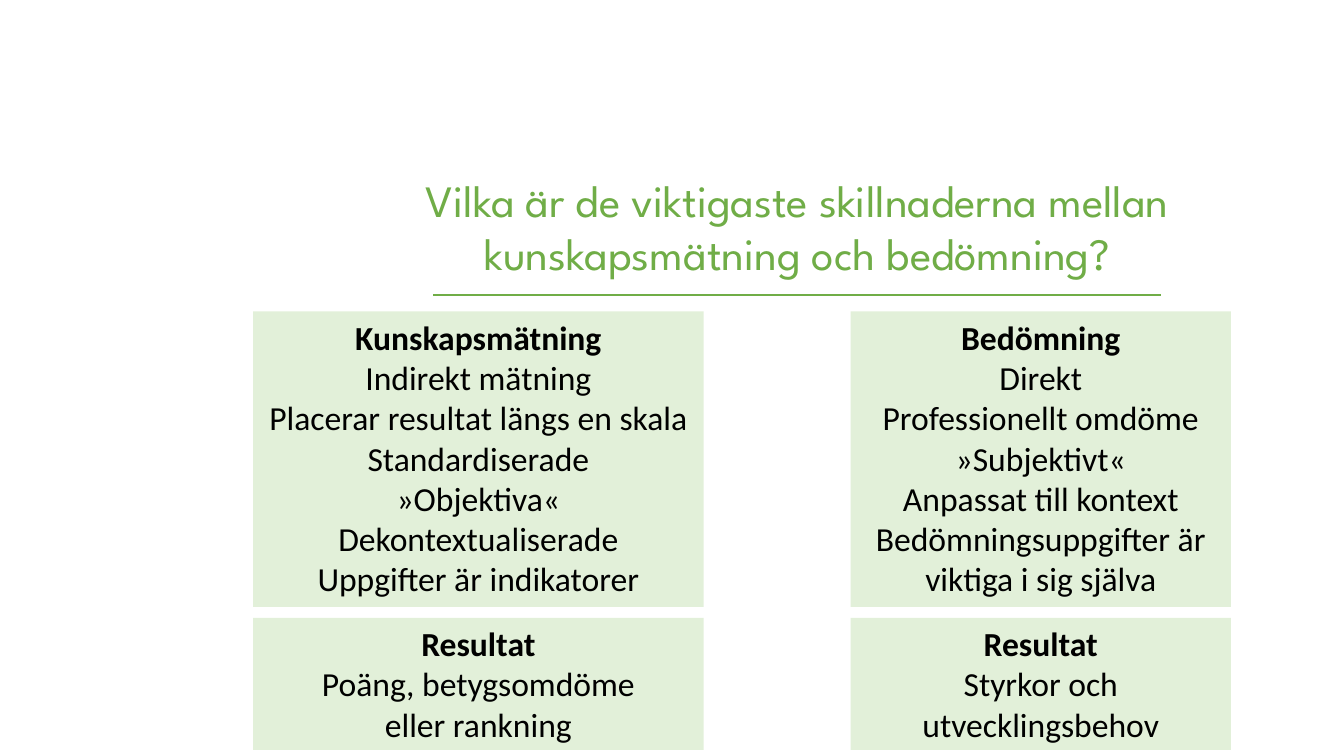
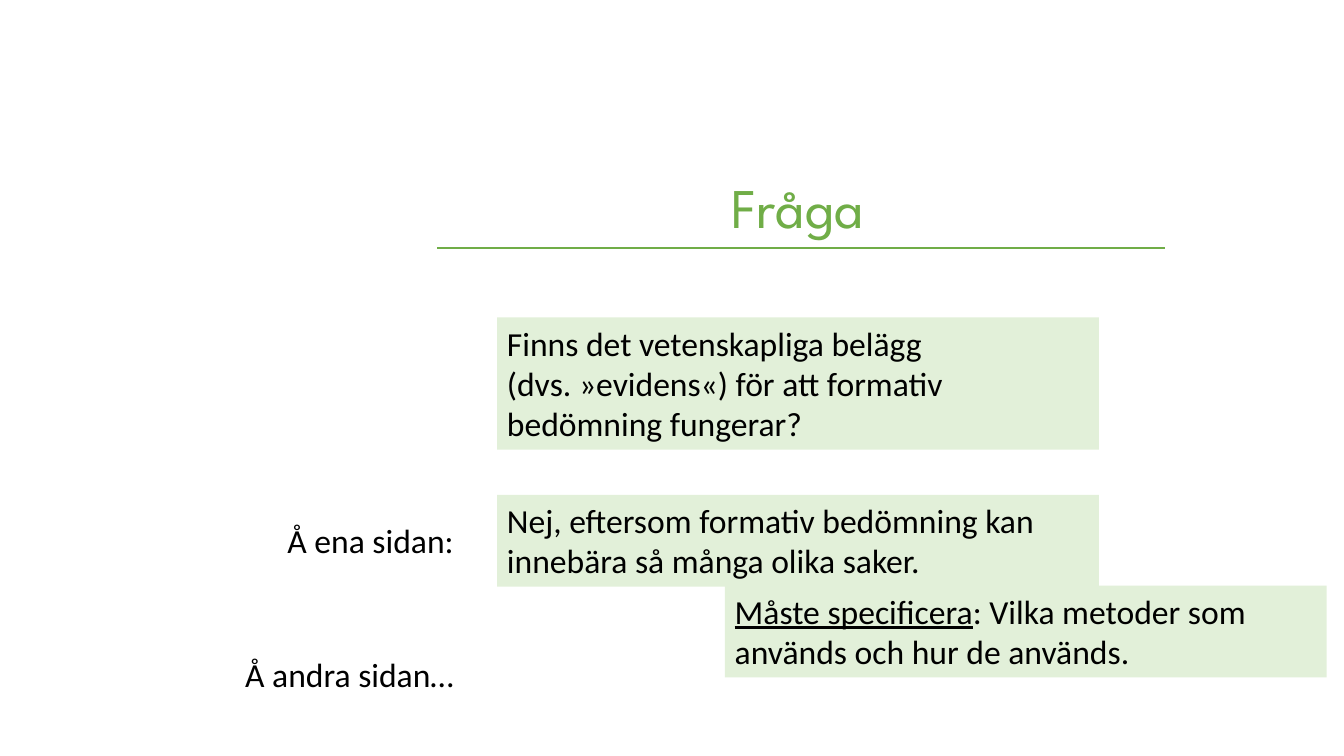
"""Build two slides on knowledge measurement, assessment and evidence."""
from dataclasses import dataclass
from itertools import product
from typing import Optional

from lxml import etree
from pptx import Presentation
from pptx import util as u
from pptx.dml.color import RGBColor
from pptx.enum import shapes, text
from pptx.oxml.ns import qn

ALIGN = text.PP_ALIGN


@dataclass(frozen=True)
class Theme:
    accent: RGBColor = RGBColor(0x70, 0xAD, 0x47)
    panel: RGBColor = RGBColor(0xE2, 0xF0, 0xD9)
    ink: RGBColor = RGBColor(0, 0, 0)
    title_font: str = "League Spartan"
    body_font: str = "Calibri"
    title_size: int = 40
    long_title_size: int = 32
    body_size: int = 24
    rule_width: float = 1.5


@dataclass(frozen=True)
class Area:
    """A rectangle in percent of the slide's width and height."""
    left: float
    top: float
    width: float
    height: float


@dataclass(frozen=True)
class Run:
    words: str
    bold: bool = False
    underline: bool = False


@dataclass(frozen=True)
class Box:
    area: Area
    paragraphs: list[list[Run]]
    align: ALIGN = ALIGN.LEFT
    fill: Optional[RGBColor] = None


@dataclass(frozen=True)
class Heading:
    words: str
    size: int
    height: float
    rule_left: float
    rule_top: float


THEME = Theme()
WIDTH, HEIGHT = u.Inches(13.333), u.Inches(7.5)
TITLE_LEFT, TITLE_TOP, TITLE_WIDTH = 24.08, 22.13, 70.58
RULE_LENGTH = 54.1
COLUMNS = [(18.83, 33.53), (63.3, 28.28)]
ROWS = [(41.2, 39.07), (81.73, 17.47)]
COMPARISON = [
    [
        ["Kunskapsmätning", "Indirekt mätning", "Placerar resultat längs en skala",
         "Standardiserade", "»Objektiva«", "Dekontextualiserade",
         "Uppgifter är indikatorer"],
        ["Bedömning", "Direkt", "Professionellt omdöme", "»Subjektivt«",
         "Anpassat till kontext", "Bedömningsuppgifter är viktiga i sig själva"],
    ],
    [
        ["Resultat", "Poäng, betygsomdöme\neller rankning"],
        ["Resultat", "Styrkor och utvecklingsbehov"],
    ],
]
ANSWER_LEFT, ANSWER_WIDTH, ANSWER_HEIGHT = 36.98, 44.78, 12.13
STATEMENTS = [
    (Area(ANSWER_LEFT, 42, ANSWER_WIDTH, 17.47),
     [Run("Finns det vetenskapliga belägg\n(dvs. »evidens«) för att formativ bedömning fungerar?")]),
    (Area(ANSWER_LEFT, 65.47, ANSWER_WIDTH, ANSWER_HEIGHT),
     [Run("Nej, eftersom formativ bedömning kan innebära så många olika saker.")]),
    (Area(53.93, 77.47, ANSWER_WIDTH, ANSWER_HEIGHT),
     [Run("Måste specificera", underline=True),
      Run(": Vilka metoder som används och hur de används.")]),
]
LABELS = [("Å ena sidan:", 68.13), ("Å andra sidan…", 85.87)]


def across(share: float) -> u.Emu:
    """Turn a percentage of the slide's width into a length."""
    return u.Emu(round(WIDTH * share / 100))


def down(share: float) -> u.Emu:
    """Turn a percentage of the slide's height into a length."""
    return u.Emu(round(HEIGHT * share / 100))


def add_words(paragraph, run: Run, *, font: str, size: int, color: RGBColor) -> None:
    """Add formatted text, with a line break at each newline."""
    for index, line in enumerate(run.words.split("\n")):
        if index:
            paragraph.add_line_break()
        piece = paragraph.add_run()
        piece.text = line
        piece.font.name = font
        piece.font.size = u.Pt(size)
        piece.font.color.rgb = color
        piece.font.bold = run.bold
        piece.font.underline = run.underline


def add_box(slide, box: Box, *, font: str = THEME.body_font,
            size: int = THEME.body_size, color: RGBColor = THEME.ink) -> None:
    """Draw a text box, or a filled rectangle when the box has a fill."""
    area = box.area
    frame = across(area.left), down(area.top), across(area.width), down(area.height)
    if box.fill is None:
        shape = slide.shapes.add_textbox(*frame)
    else:
        shape = slide.shapes.add_shape(shapes.MSO_SHAPE.RECTANGLE, *frame)
        shape.shadow.inherit = False
        shape.fill.solid()
        shape.fill.fore_color.rgb = box.fill
        shape.line.fill.background()
    text_frame = shape.text_frame
    text_frame.word_wrap = True
    text_frame.auto_size = text.MSO_AUTO_SIZE.SHAPE_TO_FIT_TEXT
    text_frame.vertical_anchor = text.MSO_ANCHOR.TOP
    for index, runs in enumerate(box.paragraphs):
        paragraph = text_frame.add_paragraph() if index else text_frame.paragraphs[0]
        paragraph.alignment = box.align
        for run in runs:
            add_words(paragraph, run, font=font, size=size, color=color)


def add_slide(presentation, heading: Heading):
    """Add a blank slide with a centred title and the rule below it."""
    slide = presentation.slides.add_slide(presentation.slide_layouts[6])
    area = Area(TITLE_LEFT, TITLE_TOP, TITLE_WIDTH, heading.height)
    add_box(slide, Box(area, [[Run(heading.words)]], ALIGN.CENTER),
            font=THEME.title_font, size=heading.size, color=THEME.accent)
    rule = slide.shapes.add_connector(
        shapes.MSO_CONNECTOR.STRAIGHT, across(heading.rule_left), down(heading.rule_top),
        across(heading.rule_left + RULE_LENGTH), down(heading.rule_top))
    rule.line.color.rgb = THEME.accent
    rule.line.width = u.Pt(THEME.rule_width)
    etree.SubElement(rule.element.spPr, qn("a:effectLst"))
    return slide


def build_comparison(presentation) -> None:
    """Compare measurement and assessment in a grid of panels."""
    slide = add_slide(presentation, Heading(
        "Vilka är de viktigaste skillnaderna mellan kunskapsmätning och bedömning?",
        THEME.long_title_size, 15.6, 32.25, 39.07))
    for (row, (top, height)), (column, (left, width)) in product(
            enumerate(ROWS), enumerate(COLUMNS)):
        paragraphs = [[Run(line, bold=index == 0)]
                      for index, line in enumerate(COMPARISON[row][column])]
        add_box(slide, Box(Area(left, top, width, height), paragraphs,
                           ALIGN.CENTER, THEME.panel))


def build_question(presentation) -> None:
    """Pose the question about evidence and answer from two sides."""
    slide = add_slide(presentation, Heading("Fråga", THEME.title_size, 10, 32.55, 32.8))
    for area, runs in STATEMENTS:
        add_box(slide, Box(area, [runs], fill=THEME.panel))
    for words, top in LABELS:
        add_box(slide, Box(Area(15.6, top, 18.9, 6.67), [[Run(words)]], ALIGN.RIGHT))


def main() -> None:
    """Build and save the presentation."""
    presentation = Presentation()
    presentation.slide_width, presentation.slide_height = WIDTH, HEIGHT
    build_comparison(presentation)
    build_question(presentation)
    presentation.save("out.pptx")


if __name__ == "__main__":
    main()
